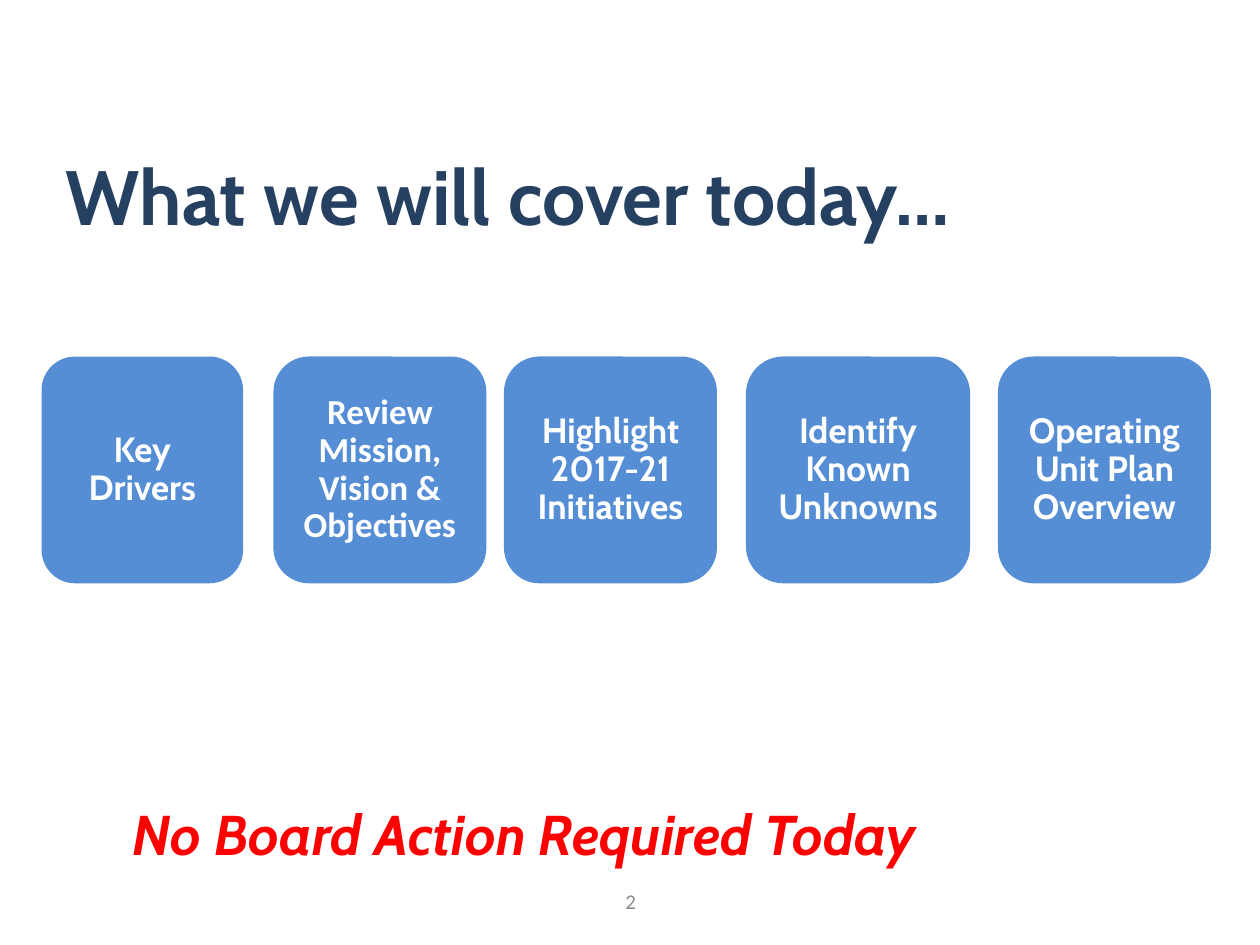
from pptx import Presentation
from pptx.dml.color import RGBColor
from pptx.enum.shapes import MSO_SHAPE as Shape
from pptx.enum.text import MSO_ANCHOR as Anchor, PP_ALIGN as Align
from pptx.util import Inches, Pt

NAVY = RGBColor(0x25, 0x40, 0x61)
BLUE = RGBColor(0x55, 0x8E, 0xD5)
RED = RGBColor(0xFF, 0x00, 0x00)
GRAY = RGBColor(0x8C, 0x8C, 0x8C)
WHITE = RGBColor(0xFF, 0xFF, 0xFF)

TOP, HIGH, PAD = 2.83, 1.8, 0.07
TOPICS = [
    (0.33, 1.6, "Key Drivers", "Cabin"),
    (2.17, 1.69, "Review Mission, Vision & Objectives", "Calibri"),
    (4, 1.69, "Highlight 2017-21 Initiatives", "Cabin"),
    (5.92, 1.78, "Identify Known Unknowns", "Cabin"),
    (7.92, 1.69, "Operating Unit Plan Overview", "Cabin"),
]


def set_all(item, values):
    for name, value in values.items():
        setattr(item, name, value)


def write(shape, text, color, size, face="Cabin", align=Align.CENTER,
          anchor=Anchor.MIDDLE, bold=True, italic=False):
    frame = shape.text_frame
    set_all(frame, {"word_wrap": True, "vertical_anchor": anchor})
    para = frame.paragraphs[0]
    para.alignment = align
    run = para.add_run()
    run.text = text
    set_all(run.font, {"name": face, "size": Pt(size), "bold": bold,
                       "italic": italic})
    run.font.color.rgb = color
    return para


def add_title(slide, text):
    title = slide.shapes.title
    set_all(title, {"left": Inches(0.42), "top": Inches(0.92),
                    "width": Inches(9), "height": Inches(1.25)})
    write(title, text, NAVY, 44, align=Align.LEFT)


def add_card(slide, left, width, text, face):
    card = slide.shapes.add_shape(
        Shape.ROUNDED_RECTANGLE, Inches(left), Inches(TOP),
        Inches(width), Inches(HIGH))
    card.shadow.inherit = False
    card.fill.solid()
    card.fill.fore_color.rgb = BLUE
    card.line.fill.background()
    sides = ("left", "right", "top", "bottom")
    set_all(card.text_frame, {f"margin_{side}": Inches(PAD) for side in sides})
    para = write(card, text, WHITE, 20, face)
    para.line_spacing = 0.9


def add_label(slide, left, top, width, height, text, color, size, **style):
    box = slide.shapes.add_textbox(
        Inches(left), Inches(top), Inches(width), Inches(height))
    write(box, text, color, size, **style)


def main():
    deck = Presentation()
    set_all(deck, {"slide_width": Inches(10), "slide_height": Inches(7.5)})
    slide = deck.slides.add_slide(deck.slide_layouts[5])
    add_title(slide, "What we will cover today…")
    for topic in TOPICS:
        add_card(slide, *topic)
    add_label(slide, 0.5, 6.3, 7.33, 0.64, "No Board Action Required Today",
              RED, 32, anchor=Anchor.TOP, italic=True)
    add_label(slide, 3.42, 6.95, 3.17, 0.4, "2", GRAY, 12,
              face="Calibri", bold=False)
    deck.save("out.pptx")


if __name__ == "__main__":
    main()
